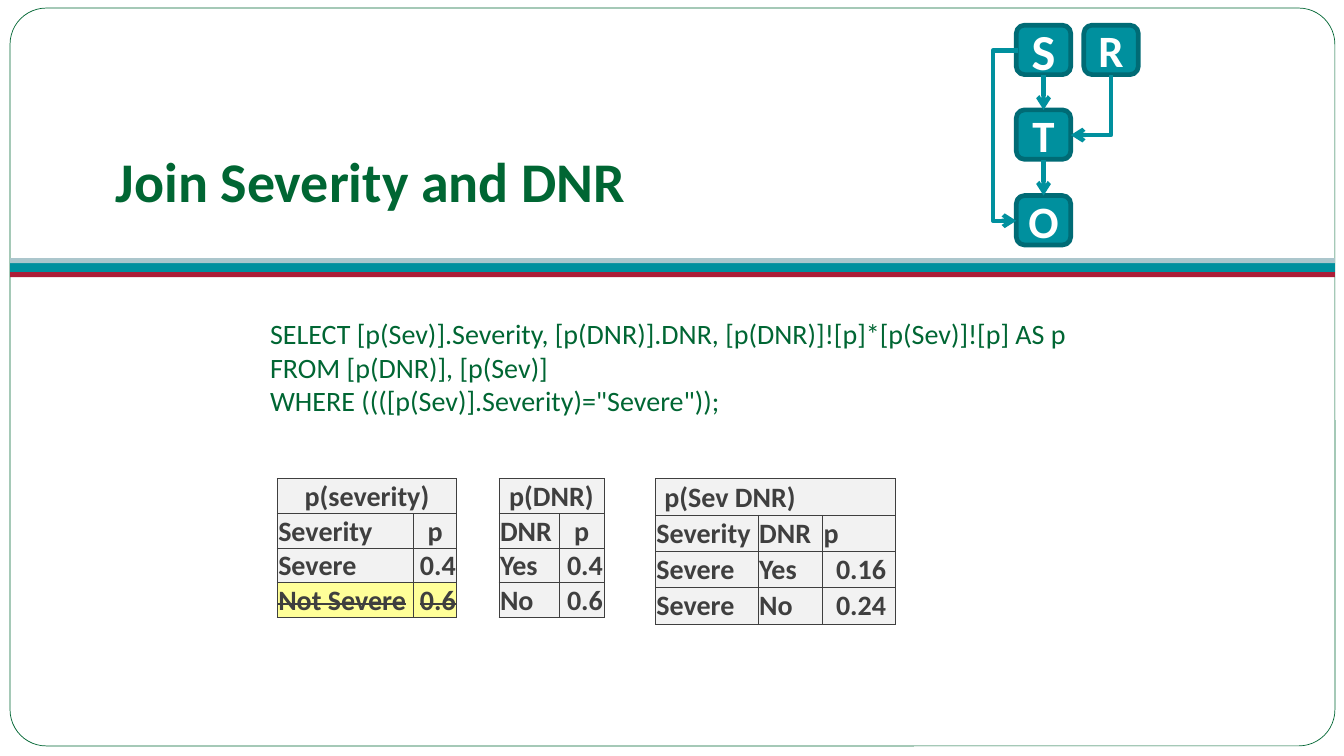
from lxml.etree import SubElement
from pptx import Presentation
from pptx.dml.color import RGBColor
from pptx.enum.shapes import MSO_CONNECTOR as Connector, MSO_SHAPE as Shape
from pptx.enum.text import MSO_ANCHOR as Anchor, PP_ALIGN as Align
from pptx.oxml.ns import qn
from pptx.util import Inches, Pt

COLORS = {
    "green": "006633", "teal": "00909E", "dark_teal": "006B75",
    "mist": "ABC6CC", "crimson": "AC1D37", "white": "FFFFFF",
    "ink": "3F3F3F", "cell": "F2F2F2", "highlight": "FFFF99",
}
ALIGNMENTS = {"l": Align.LEFT, "c": Align.CENTER, "r": Align.RIGHT}


def rgb(name):
    return RGBColor.from_string(COLORS[name])


def set_margins(target, left=0, top=0, right=0, bottom=0):
    """Set the insets, in inches, of a text frame or a table cell."""
    margins = {"left": left, "top": top, "right": right, "bottom": bottom}
    for side, value in margins.items():
        setattr(target, f"margin_{side}", Inches(value))


class SlideBuilder:
    font_name = "Calibri"

    def __init__(self, slide):
        self.slide = slide

    def add_words(self, paragraph, text, color, size, align="l", bold=False, strike=False):
        paragraph.alignment = ALIGNMENTS[align]
        run = paragraph.add_run()
        run.text = text
        formats = {"name": self.font_name, "size": Pt(size), "bold": bold}
        for attribute, value in formats.items():
            setattr(run.font, attribute, value)
        run.font.color.rgb = rgb(color)
        if strike:
            run.font._element.set("strike", "sngStrike")

    def shape(self, kind, box, fill, line=None, width=0, corner=None):
        shape = self.slide.shapes.add_shape(kind, *map(Inches, box))
        shape.shadow.inherit = False
        shape.fill.solid()
        shape.fill.fore_color.rgb = rgb(fill)
        if corner is not None:
            shape.adjustments[0] = corner
        if line:
            shape.line.color.rgb = rgb(line)
            shape.line.width = Pt(width)
        else:
            shape.line.fill.background()
        return shape

    def node(self, letter, left, top, size=32):
        box = (left, top, 0.54, 0.49)
        shape = self.shape(Shape.ROUNDED_RECTANGLE, box, "teal", "dark_teal", 3.35)
        frame = shape.text_frame
        frame.vertical_anchor = Anchor.MIDDLE
        set_margins(frame)
        self.add_words(frame.paragraphs[0], letter, "white", size, "c", bold=True)

    def arrow(self, start, end, kind=Connector.STRAIGHT):
        points = map(Inches, (*start, *end))
        connector = self.slide.shapes.add_connector(kind, *points)
        connector.line.color.rgb = rgb("teal")
        connector.line.width = Pt(3)
        properties = connector._element.spPr
        SubElement(properties.find(qn("a:ln")), qn("a:tailEnd"), type="arrow")
        SubElement(properties, qn("a:effectLst"))
        return properties

    def side_arrow(self, start, end, bend):
        """Draw an arrow that leaves sideways, runs down at bend and comes back."""
        properties = self.arrow(start, end, Connector.ELBOW)
        ratio = (bend - start[0]) / (end[0] - start[0])
        guides = properties.find(qn("a:prstGeom")).get_or_add_avLst()
        SubElement(guides, qn("a:gd"), name="adj1", fmla=f"val {round(ratio * 100000)}")

    def corner_arrow(self, start, end):
        """Draw an arrow that runs down from start and then left to end."""
        width, height = start[0] - end[0], end[1] - start[1]
        middle_x, middle_y = (start[0] + end[0]) / 2, (start[1] + end[1]) / 2
        left, top = middle_x - height / 2, middle_y - width / 2
        properties = self.arrow((left, top), (left + height, top + width), Connector.ELBOW)
        properties.find(qn("a:prstGeom")).set("prst", "bentConnector2")
        properties.find(qn("a:xfrm")).set("rot", str(90 * 60000))

    def text(self, box, lines, size, bold=False, anchor=Anchor.TOP):
        frame = self.slide.shapes.add_textbox(*map(Inches, box)).text_frame
        frame.word_wrap = True
        frame.vertical_anchor = anchor
        for index, line in enumerate(lines):
            paragraph = frame.add_paragraph() if index else frame.paragraphs[0]
            self.add_words(paragraph, line, "green", size, bold=bold)

    def borders(self, cell, sides):
        properties = cell._tc.get_or_add_tcPr()
        for side in "LRTB":
            line = SubElement(properties, qn(f"a:ln{side}"), w=str(int(Pt(0.5))))
            if side in sides:
                fill = SubElement(line, qn("a:solidFill"))
                SubElement(fill, qn("a:srgbClr"), val=COLORS["ink"])
            else:
                SubElement(line, qn("a:noFill"))

    def table(self, left, top, widths, row_height, rows, merges, anchors, indents):
        """Fill a table from (text, alignment) cells; None marks a gap cell.

        indents maps (row, column) to the left and right insets of a cell.
        """
        size = (sum(widths), row_height * len(rows))
        frame = self.slide.shapes.add_table(
            len(rows), len(widths), *map(Inches, (left, top, *size)))
        table = frame.table
        table.first_row = table.horz_banding = False
        for column, width in zip(table.columns, widths):
            column.width = Inches(width)
        for row_index, row in enumerate(rows):
            table.rows[row_index].height = Inches(row_height)
            struck = row[0][0].startswith("Not")
            for column_index, content in enumerate(row):
                cell = table.cell(row_index, column_index)
                cell.vertical_anchor = anchors[row_index]
                if content is None:
                    set_margins(cell)
                    self.borders(cell, "LR")
                    cell.fill.background()
                    continue
                start, end = indents.get((row_index, column_index), (0.01, 0.01))
                set_margins(cell, start, 0.01, end)
                self.borders(cell, "LRTB")
                strike = struck and column_index < 2
                cell.fill.solid()
                cell.fill.fore_color.rgb = rgb("highlight" if strike else "cell")
                text, align = content
                if text:
                    self.add_words(cell.text_frame.paragraphs[0], text, "ink", 20,
                                   align, bold=True, strike=strike)
        for first, last in merges:
            table.cell(0, first).merge(table.cell(0, last))


def main():
    presentation = Presentation()
    presentation.slide_width = Inches(13.33)
    presentation.slide_height = Inches(7.5)
    builder = SlideBuilder(presentation.slides.add_slide(presentation.slide_layouts[6]))

    builder.shape(Shape.ROUNDED_RECTANGLE, (0.1, 0.08, 13.14, 7.32),
                  "white", "green", 0.5, corner=0.049)
    for top, height, color in ((2.6, 0.1, "teal"), (2.56, 0.05, "mist"), (2.7, 0.05, "crimson")):
        builder.shape(Shape.RECTANGLE, (0.1, top, 13.14, height), color)

    builder.text((1.05, 1.04, 11.33, 1.49), ["Join Severity and DNR"], 40, True, Anchor.MIDDLE)

    builder.node("O", 10.08, 1.94)
    builder.node("S", 10.08, 0.25, size=36)
    builder.node("T", 10.08, 1.09)
    for top in (0.74, 1.59):
        builder.arrow((10.35, top), (10.35, top + 0.35))
    builder.node("R", 10.75, 0.25)
    builder.side_arrow((10.1, 0.5), (10.08, 2.19), bend=9.85)
    builder.corner_arrow((11.02, 0.74), (10.62, 1.34))

    builder.text((2.58, 3.09, 8.33, 1.11), [
        "SELECT [p(Sev)].Severity, [p(DNR)].DNR, [p(DNR)]![p]*[p(Sev)]![p] AS p",
        "FROM [p(DNR)], [p(Sev)]",
        'WHERE ((([p(Sev)].Severity)="Severe"));',
    ], 20)

    spanned = ("", "l")
    builder.table(2.75, 4.75, (1.35, 0.43, 0.42, 0.6, 0.44), 0.34, [
        [("p(severity)", "c"), spanned, None, ("p(DNR)", "c"), spanned],
        [("Severity", "l"), ("p", "c"), None, ("DNR", "l"), ("p", "c")],
        [("Severe", "l"), ("0.4", "r"), None, ("Yes", "l"), ("0.4", "r")],
        [("Not Severe", "l"), ("0.6", "r"), None, ("No", "l"), ("0.6", "r")],
    ], merges=[(0, 1), (3, 4)], anchors=[Anchor.BOTTOM] * 4, indents={})
    builder.table(6.5, 4.75, (1.02, 0.64, 0.72), 0.36, [
        [("p(Sev DNR)", "l"), spanned, spanned],
        [("Severity", "l"), ("DNR", "l"), ("p", "l")],
        [("Severe", "l"), ("Yes", "l"), ("0.16", "r")],
        [("Severe", "l"), ("No", "l"), ("0.24", "r")],
    ], merges=[(0, 2)], anchors=[Anchor.MIDDLE] * 2 + [Anchor.TOP] * 2,
        indents={(0, 0): (0.09, 0.01), (2, 2): (0.01, 0.09), (3, 2): (0.01, 0.09)})

    presentation.save("out.pptx")


if __name__ == "__main__":
    main()
